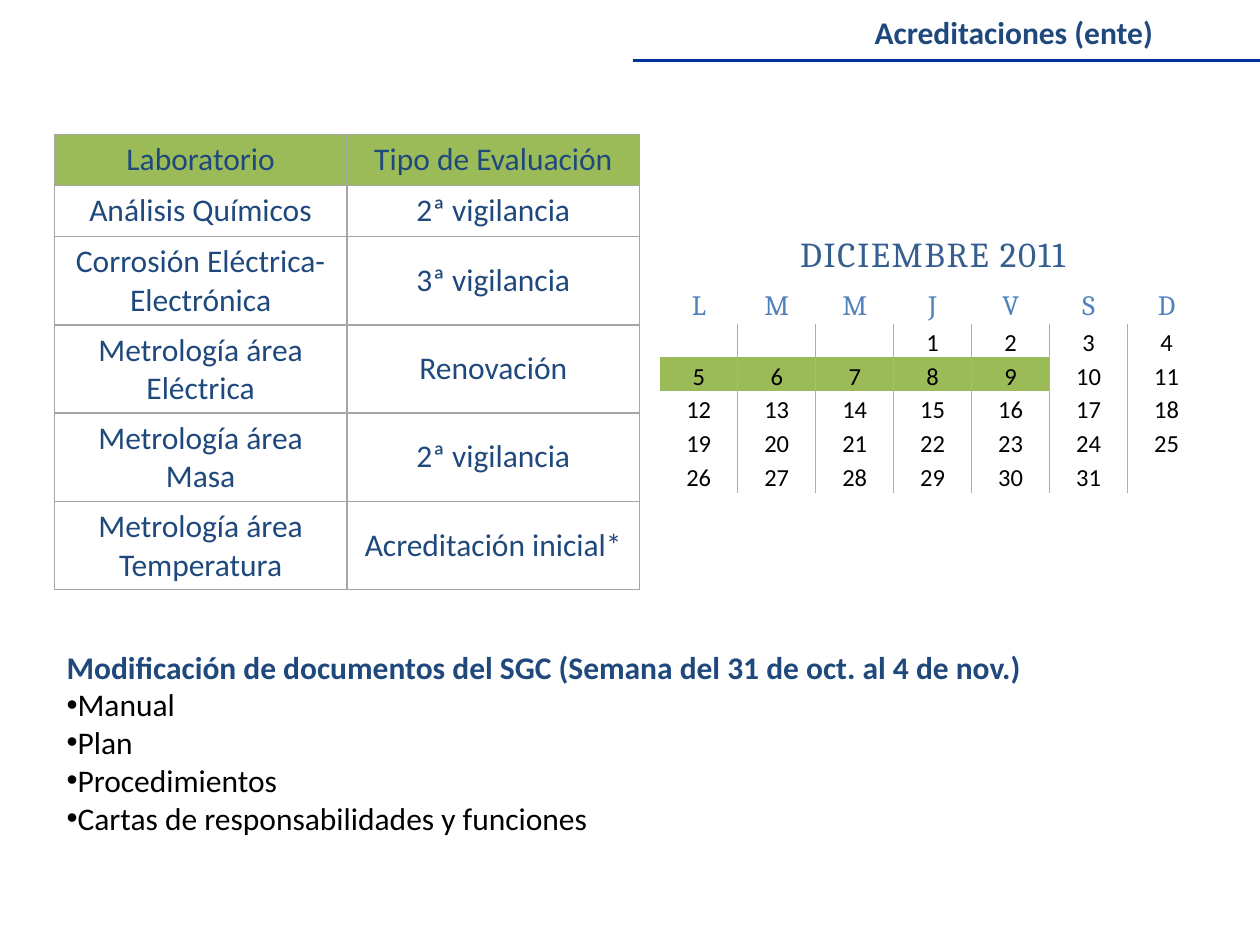
from dataclasses import dataclass

from lxml.etree import SubElement
from pptx import Presentation
from pptx.dml.color import RGBColor
from pptx.enum.shapes import MSO_CONNECTOR
from pptx.enum.text import MSO_ANCHOR, MSO_AUTO_SIZE, PP_ALIGN
from pptx.oxml.ns import qn
from pptx.util import Pt

TITLE = "Acreditaciones (ente)"
EVALUATIONS = [
    ("Laboratorio", "Tipo de Evaluación"),
    ("Análisis Químicos", "2ª vigilancia"),
    ("Corrosión Eléctrica-Electrónica", "3ª vigilancia"),
    ("Metrología área Eléctrica", "Renovación"),
    ("Metrología área Masa", "2ª vigilancia"),
    ("Metrología área Temperatura", "Acreditación inicial*"),
]
MONTH = "DICIEMBRE 2011"
WEEKDAYS = "LMMJVSD"
FIRST_COLUMN, LAST_DAY, WEEKS = 3, 31, 5
MARKED_DAYS = range(5, 10)
CHANGES_HEADING = "Modificación de documentos del SGC (Semana del 31 de oct. al 4 de nov.)"
CHANGED_DOCUMENTS = ["Manual", "Plan", "Procedimientos", "Cartas de responsabilidades y funciones"]


@dataclass(frozen=True)
class Theme:
    body_font: str = "Calibri"
    month_font: str = "Cambria"
    navy: str = "1F497D"
    black: str = "000000"
    month: str = "365F91"
    weekday: str = "4F81BD"
    green: str = "9BBB59"
    rule: str = "003399"
    grid: str = "A6A6A6"
    day_line: str = "95B3D7"
    body_size: float = 18
    month_size: float = 20
    weekday_size: float = 16
    day_size: float = 14
    plain_table: str = "{2D5ABB26-0587-4C30-8999-92F81FD0307C}"


THEME = Theme()


def add_run(paragraph, text, color, size=THEME.body_size, font=THEME.body_font, bold=False, spacing=0):
    run = paragraph.add_run()
    run.text = text
    run.font.name, run.font.size, run.font.bold = font, Pt(size), bold
    run.font.color.rgb = RGBColor.from_string(color)
    if spacing:
        run.font._element.set("spc", str(spacing * 100))


def add_text_box(slide, left, top, width, height, wrap):
    frame = slide.shapes.add_textbox(Pt(left), Pt(top), Pt(width), Pt(height)).text_frame
    frame.word_wrap = wrap
    frame.auto_size = MSO_AUTO_SIZE.SHAPE_TO_FIT_TEXT
    return frame


def add_plain_table(slide, left, top, column_widths, row_heights):
    """Add a table whose style has neither fills nor lines."""
    table = slide.shapes.add_table(
        len(row_heights), len(column_widths), Pt(left), Pt(top),
        Pt(sum(column_widths)), Pt(sum(row_heights))).table
    table._tbl.tblPr.find(qn("a:tableStyleId")).text = THEME.plain_table
    table.first_row = table.horz_banding = False
    for column, width in zip(table.columns, column_widths):
        column.width = Pt(width)
    for row, height in zip(table.rows, row_heights):
        row.height = Pt(height)
    return table


def style_cell(cell, sides, line_color, fill=None):
    """Draw 1 pt borders on the sides (in L, R, T, B order), then fill the cell."""
    properties = cell._tc.get_or_add_tcPr()
    for side in sides:
        line = SubElement(properties, qn(f"a:ln{side}"), w=str(Pt(1)))
        solid = SubElement(line, qn("a:solidFill"))
        SubElement(solid, qn("a:srgbClr"), val=line_color)
    cell.vertical_anchor = MSO_ANCHOR.MIDDLE
    if fill:
        cell.fill.solid()
        cell.fill.fore_color.rgb = RGBColor.from_string(fill)


def fill_calendar_cell(cell, text, color, size, **run_style):
    cell.margin_left = cell.margin_right = Pt(5)
    cell.margin_top = cell.margin_bottom = 0
    paragraph = cell.text_frame.paragraphs[0]
    paragraph.alignment = PP_ALIGN.CENTER
    paragraph.line_spacing = 1.15
    if text:
        add_run(paragraph, text, color, size, **run_style)
    else:
        # An empty cell would otherwise take the default size and stretch its row.
        SubElement(paragraph._p, qn("a:endParaRPr"), sz=str(size * 100))


def add_header(slide):
    rule = slide.shapes.add_connector(MSO_CONNECTOR.STRAIGHT, Pt(720), Pt(34.5), Pt(361.5), Pt(34.5))
    rule.line.color.rgb = RGBColor.from_string(THEME.rule)
    rule.line.width = Pt(1.5)
    SubElement(rule._element.spPr, qn("a:effectLst"))
    paragraph = add_text_box(slide, 42.5, 3.6, 623.5, 29, True).paragraphs[0]
    paragraph.alignment = PP_ALIGN.RIGHT
    add_run(paragraph, TITLE, THEME.navy, bold=True)


def add_calendar(slide):
    days = len(WEEKDAYS)
    table = add_plain_table(slide, 377, 126.8, [44.57] * days, [36, 21.7] + [19.3] * WEEKS)
    month_cell = table.cell(0, 0)
    month_cell.merge(table.cell(0, days - 1))
    month_style = {"font": THEME.month_font, "spacing": 1}
    style_cell(month_cell, "", None)
    fill_calendar_cell(month_cell, MONTH, THEME.month, THEME.month_size, **month_style)
    for column, weekday in enumerate(WEEKDAYS):
        style_cell(table.cell(1, column), "", None)
        fill_calendar_cell(table.cell(1, column), weekday, THEME.weekday, THEME.weekday_size, **month_style)
        sides = ("L" if column else "") + ("R" if column < days - 1 else "")
        for week in range(WEEKS):
            cell = table.cell(week + 2, column)
            day = week * days + column - FIRST_COLUMN + 1
            style_cell(cell, sides, THEME.day_line, THEME.green if day in MARKED_DAYS else None)
            fill_calendar_cell(cell, str(day) if 1 <= day <= LAST_DAY else "", THEME.black, THEME.day_size)


def add_evaluations(slide):
    table = add_plain_table(slide, 31, 76.8, [167.3] * 2, [29.2] * 2 + [50.45] * 4)
    for row, entries in enumerate(EVALUATIONS):
        for column, entry in enumerate(entries):
            cell = table.cell(row, column)
            style_cell(cell, "LRTB", THEME.grid, THEME.green if row == 0 else None)
            paragraph = cell.text_frame.paragraphs[0]
            paragraph.alignment = PP_ALIGN.CENTER
            add_run(paragraph, entry, THEME.navy)


def add_changes(slide):
    frame = add_text_box(slide, 31, 366.5, 565, 116.6, False)
    add_run(frame.paragraphs[0], CHANGES_HEADING, THEME.navy, bold=True)
    for document in CHANGED_DOCUMENTS:
        paragraph = frame.add_paragraph()
        properties = paragraph._p.get_or_add_pPr()
        SubElement(properties, qn("a:buFont"), typeface="Arial")
        SubElement(properties, qn("a:buChar"), char="•")
        add_run(paragraph, document, THEME.black)


def main():
    presentation = Presentation()
    presentation.slide_width, presentation.slide_height = Pt(720), Pt(540)
    slide = presentation.slides.add_slide(presentation.slide_layouts[6])
    add_header(slide)
    add_calendar(slide)
    add_evaluations(slide)
    add_changes(slide)
    presentation.save("out.pptx")


if __name__ == "__main__":
    main()
